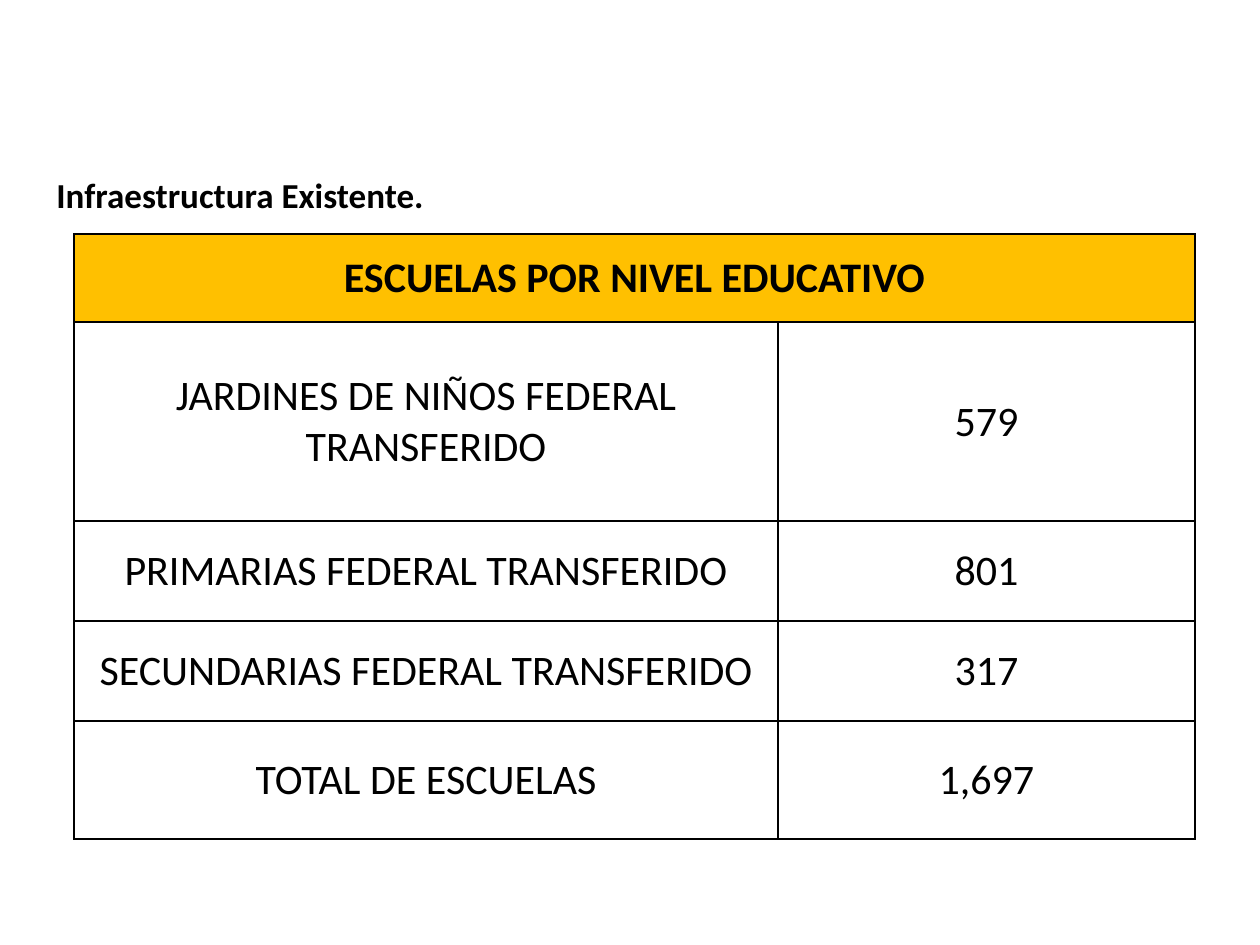
from lxml.etree import SubElement
from pptx import Presentation
from pptx.dml.color import RGBColor
from pptx.enum.text import MSO_ANCHOR, PP_ALIGN
from pptx.oxml.ns import qn
from pptx.util import Pt

PX = 914400 // 126
BLACK = RGBColor(0x00, 0x00, 0x00)
AMBER = RGBColor(0xFF, 0xC0, 0x00)
FONT = "Calibri"

COLUMN_WIDTHS = [704, 417]
ROW_HEIGHTS = [88, 199, 100, 100, 118]
ROWS = [
    ("ESCUELAS POR NIVEL EDUCATIVO", ""),
    ("JARDINES DE NIÑOS FEDERAL TRANSFERIDO", "579"),
    ("PRIMARIAS FEDERAL TRANSFERIDO", "801"),
    ("SECUNDARIAS FEDERAL TRANSFERIDO", "317"),
    ("TOTAL DE ESCUELAS", "1,697"),
]


def style_font(font, size, bold):
    font.name = FONT
    font.size = Pt(size)
    font.bold = bold
    font.color.rgb = BLACK


def add_borders(cell):
    """Draw a 1 pt black line on all four sides; call before setting the fill."""
    properties = cell._tc.get_or_add_tcPr()
    for side in ("a:lnL", "a:lnR", "a:lnT", "a:lnB"):
        line = SubElement(properties, qn(side), w=str(Pt(1)))
        fill = SubElement(line, qn("a:solidFill"))
        SubElement(fill, qn("a:srgbClr"), val=str(BLACK))


deck = Presentation()
deck.slide_width = 1260 * PX
deck.slide_height = 945 * PX
page = deck.slides.add_slide(deck.slide_layouts[6])

# Heading
box = page.shapes.add_textbox(44 * PX, 155 * PX, 507 * PX, 79 * PX)
frame = box.text_frame
frame.word_wrap = True
frame.vertical_anchor = MSO_ANCHOR.MIDDLE
heading = frame.paragraphs[0]
heading.text = "Infraestructura Existente."
style_font(heading.font, 20, True)

# Schools by level
table = page.shapes.add_table(
    len(ROWS), len(COLUMN_WIDTHS), 74 * PX, 234 * PX,
    sum(COLUMN_WIDTHS) * PX, sum(ROW_HEIGHTS) * PX,
).table
for column, width in zip(table.columns, COLUMN_WIDTHS):
    column.width = width * PX
for row, height in zip(table.rows, ROW_HEIGHTS):
    row.height = height * PX
table.cell(0, 0).merge(table.cell(0, 1))

for row_index, texts in enumerate(ROWS):
    is_header = row_index == 0
    for column_index, text in enumerate(texts):
        cell = table.cell(row_index, column_index)
        add_borders(cell)
        if is_header:
            cell.fill.solid()
            cell.fill.fore_color.rgb = AMBER
        else:
            cell.fill.background()
        cell.margin_left = cell.margin_right = cell.margin_top = PX
        cell.margin_bottom = 0
        cell.vertical_anchor = MSO_ANCHOR.MIDDLE
        para = cell.text_frame.paragraphs[0]
        para.text = text
        para.alignment = PP_ALIGN.CENTER
        style_font(para.font, 24, is_header)

deck.save("out.pptx")
